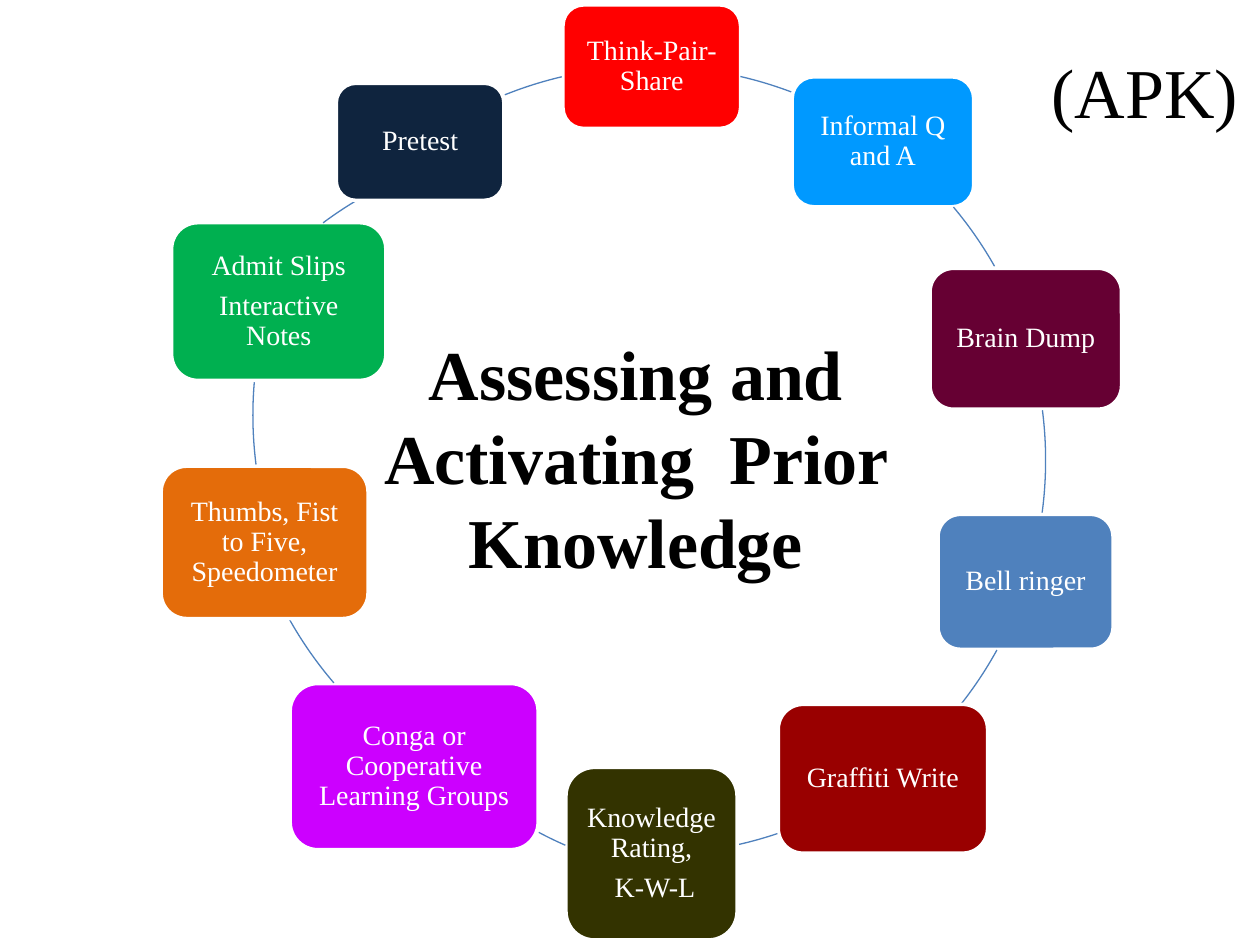
from pptx import Presentation
from pptx.dml.color import RGBColor
from pptx.enum.shapes import MSO_SHAPE
from pptx.enum.text import MSO_ANCHOR, PP_ALIGN
from pptx.util import Cm, Pt

RING_DIAMETER = 15.88
RING_CORNER = (5.20, 1.34)

# Strategy boxes, clockwise from the top: paragraphs, fill, left, top, width, height
STRATEGIES = [
    (["Think-Pair-Share"], "FF0000", 11.35, 0.10, 3.58, 2.49),
    (["Informal Q and A"], "0099FF", 15.97, 1.55, 3.66, 2.62),
    (["Brain Dump"], "660033", 18.75, 5.41, 3.86, 2.84),
    (["Bell ringer"], "4F81BD", 18.91, 10.37, 3.53, 2.72),
    (["Graffiti Write"], "990000", 15.69, 14.20, 4.22, 3.00),
    (["Knowledge Rating,", " K-W-L"], "333300", 11.41, 15.47, 3.45, 3.48),
    (["Conga or Cooperative Learning Groups"], "CC00FF", 5.85, 13.78, 5.00, 3.35),
    (["Thumbs, Fist to Five, Speedometer"], "E46C0A", 3.25, 9.40, 4.17, 3.07),
    (["Admit Slips", "Interactive Notes"], "00B050", 3.46, 4.49, 4.32, 3.18),
    (["Pretest"], "0F243E", 6.78, 1.68, 3.38, 2.36),
]

# Arcs between neighbours: corner of the full circle, start and end angle
# (clockwise from the right)
ARCS = [
    (RING_CORNER, 283, 290.8),
    (RING_CORNER, 320, 330.5),
    (RING_CORNER, 352.7, 7.8),
    (RING_CORNER, 28.8, 38.1),
    (RING_CORNER, 71.4, 77.5),
    ((6.65, 1.83), 113.7, 118),
    ((4.82, 0.66), 139.4, 150.6),
    ((5.10, 0.43), 172.8, 185),
    ((3.32, 2.92), 233.3, 238.9),
    (RING_CORNER, 248.1, 256.8),
]


def color(hex_value):
    return RGBColor.from_string(hex_value)


def write_text(frame, paragraphs, *, size, text_color, bold=False,
               align=PP_ALIGN.CENTER, anchor=MSO_ANCHOR.MIDDLE,
               line_spacing=1.0, space_after=0, inset=None):
    frame.word_wrap = True
    frame.vertical_anchor = anchor
    if inset is not None:
        frame.margin_left = frame.margin_right = Cm(inset)
        frame.margin_top = frame.margin_bottom = Cm(inset)
    for index, text in enumerate(paragraphs):
        paragraph = frame.add_paragraph() if index else frame.paragraphs[0]
        paragraph.alignment = align
        paragraph.line_spacing = line_spacing
        paragraph.space_after = Pt(space_after)
        run = paragraph.add_run()
        run.text = text
        run.font.name = "Times New Roman"
        run.font.size = Pt(size)
        run.font.bold = bold
        run.font.color.rgb = color(text_color)


class RingSlide:
    """Style and drawing methods for the strategy ring."""

    white = "FFFFFF"
    black = "000000"
    ring_color = "4F81BD"

    def __init__(self, presentation):
        self.slide = presentation.slides.add_slide(presentation.slide_layouts[6])

    def outlined(self, kind, left, top, width, height, line_color, line_width):
        shape = self.slide.shapes.add_shape(
            kind, Cm(left), Cm(top), Cm(width), Cm(height))
        shape.shadow.inherit = False
        shape.line.color.rgb = color(line_color)
        shape.line.width = Pt(line_width)
        return shape

    def box(self, paragraphs, fill, left, top, width, height):
        shape = self.outlined(MSO_SHAPE.ROUNDED_RECTANGLE, left, top, width, height,
                              self.white, 2)
        shape.fill.solid()
        shape.fill.fore_color.rgb = color(fill)
        write_text(shape.text_frame, paragraphs, size=16, text_color=self.white,
                   line_spacing=0.9, space_after=5.6, inset=0.17)

    def arc(self, corner, start, end):
        shape = self.outlined(MSO_SHAPE.ARC, *corner, RING_DIAMETER, RING_DIAMETER,
                              self.ring_color, 0.75)
        shape.fill.background()
        # One degree is 60000 units; adjustments count in 100000 units
        for index, angle in enumerate((start, end)):
            shape.adjustments[index] = angle * 0.6

    def label(self, text, left, top, width, height, **text_format):
        shape = self.slide.shapes.add_textbox(Cm(left), Cm(top), Cm(width), Cm(height))
        write_text(shape.text_frame, [text], size=40, text_color=self.black,
                   **text_format)


def main():
    presentation = Presentation()
    presentation.slide_width = Cm(25.4)
    presentation.slide_height = Cm(19.05)
    ring = RingSlide(presentation)

    # Ring of strategies, each box followed by the arc to the next
    for strategy, arc in zip(STRATEGIES, ARCS):
        ring.box(*strategy)
        ring.arc(*arc)

    # Title in the middle and abbreviation in the corner
    ring.label("Assessing and Activating  Prior Knowledge", 7.42, 7.62, 10.8, 3.18,
               bold=True)
    ring.label("(APK)", 20.95, 0.85, 4.45, 1.96,
               align=PP_ALIGN.LEFT, anchor=MSO_ANCHOR.TOP)

    presentation.save("out.pptx")


if __name__ == "__main__":
    main()
